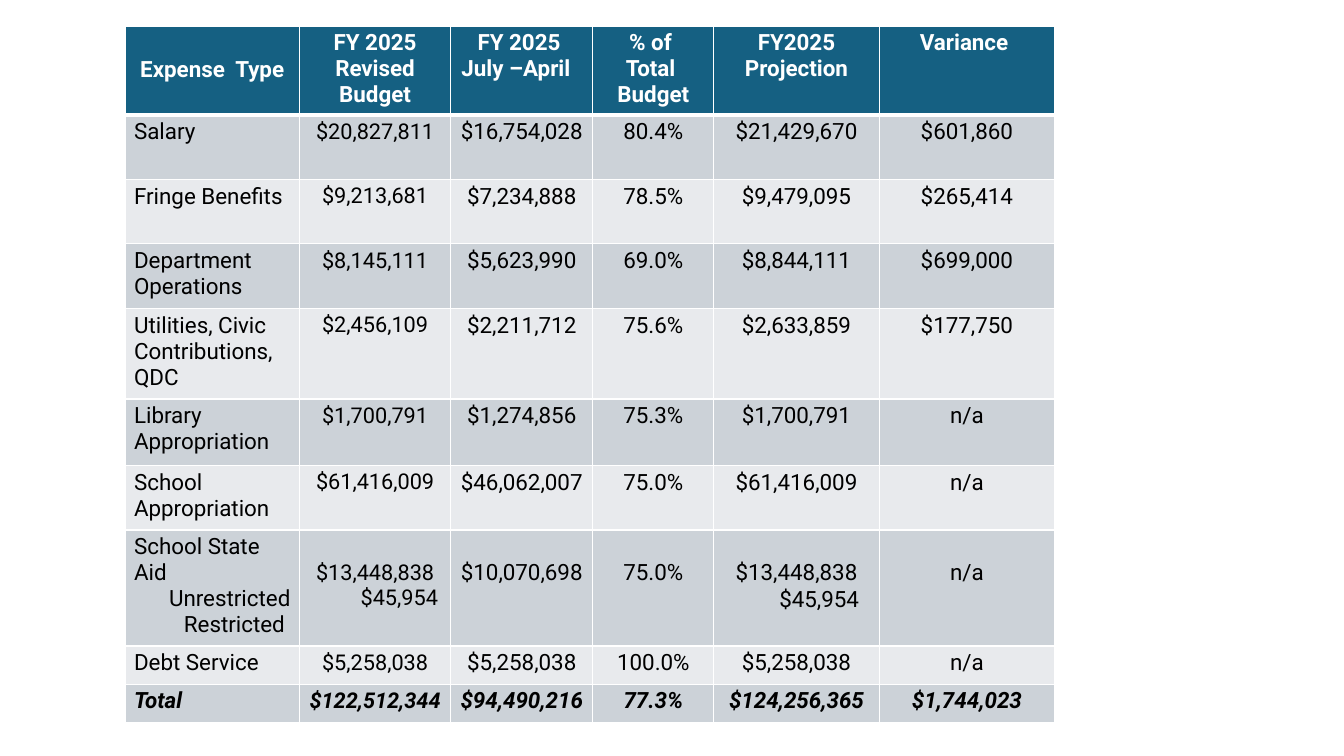
from dataclasses import dataclass

from lxml.etree import SubElement
from pptx import Presentation
from pptx.dml.color import RGBColor
from pptx.enum.text import PP_ALIGN as Align
from pptx.oxml.ns import qn
from pptx.table import _Cell as Cell
from pptx.util import Inches, Pt

FONT = "Roboto"
WHITE, BLACK, HEADER_BLUE = "FFFFFF", "000000", "156082"
BAND_FILLS = ("E8EAED", "CCD2D8")
LINE_HEIGHT = 0.26
COLUMN_WIDTHS = (1.73, 1.5, 1.41, 1.2, 1.64, 1.74)
BUDGET_COLUMN = 1


@dataclass(frozen=True)
class Line:
    text: str
    align: Align | None = None
    left: float = 0
    right: float = 0


@dataclass(frozen=True)
class Entry:
    lines: tuple[Line, ...]
    lines_down: int = 0


@dataclass(frozen=True)
class Row:
    height: float
    entries: tuple[str | Entry, ...]


def lowered(*lines: Line) -> Entry:
    return Entry(lines, lines_down=1)


# Table content
ROWS = (
    Row(0.88, (
        lowered(Line("Expense  Type")),
        "FY 2025 Revised Budget",
        Entry((Line("FY 2025 "), Line("July –April ", right=0.06))),
        Entry((Line("% of "), Line("Total "), Line("Budget"))),
        "FY2025 Projection",
        "Variance ",
    )),
    Row(0.64, ("Salary", "$20,827,811", "$16,754,028", "80.4%", "$21,429,670", "$601,860")),
    Row(0.64, ("Fringe Benefits", "$9,213,681", "$7,234,888", "78.5%", "$9,479,095", "$265,414")),
    Row(0.64, ("Department Operations", "$8,145,111", "$5,623,990", "69.0%", "$8,844,111",
               "$699,000")),
    Row(0.9, ("Utilities, Civic Contributions, QDC", "$2,456,109", "$2,211,712", "75.6%",
              "$2,633,859", "$177,750")),
    Row(0.66, ("Library Appropriation", "$1,700,791", "$1,274,856", "75.3%", "$1,700,791", "n/a")),
    Row(0.64, ("School Appropriation", "$61,416,009", "$46,062,007", "75.0%", "$61,416,009",
               "n/a")),
    Row(1.15, (
        Entry((Line("School State Aid"), Line("Unrestricted", Align.RIGHT),
               Line("Restricted ", Align.RIGHT))),
        lowered(Line("$13,448,838"), Line("$45,954", left=0.48)),
        lowered(Line("$10,070,698")),
        lowered(Line("75.0%")),
        lowered(Line("$13,448,838"), Line("$45,954", left=0.45)),
        lowered(Line("n/a")),
    )),
    Row(0.38, ("Debt Service", "$5,258,038", "$5,258,038", "100.0%", "$5,258,038", "n/a")),
    Row(0.38, ("Total", "$122,512,344", "$94,490,216", "77.3%", "$124,256,365", "$1,744,023")),
)


def color(value: str) -> RGBColor:
    return RGBColor.from_string(value)


def set_borders(cell: Cell, top: float, bottom: float) -> None:
    """Draw white borders; the fill must already be set."""
    properties = cell._tc.get_or_add_tcPr()
    widths = {"a:lnL": 1, "a:lnR": 1, "a:lnT": top, "a:lnB": bottom}
    for position, (tag, width) in enumerate(widths.items()):
        border = SubElement(properties, qn(tag), w=str(Pt(width)))
        SubElement(SubElement(border, qn("a:solidFill")), qn("a:srgbClr"), val=WHITE)
        properties.insert(position, border)


def write_entry(cell: Cell, entry: Entry, row: int, column: int) -> None:
    is_header, is_total = row == 0, row == len(ROWS) - 1
    cell.margin_left = cell.margin_right = Inches(0.09)
    cell.margin_top = Inches(0.04 + entry.lines_down * LINE_HEIGHT)
    cell.margin_bottom = Inches(0.04)
    default_align = Align.CENTER if is_header or column else Align.LEFT
    for index, line in enumerate(entry.lines):
        frame = cell.text_frame
        paragraph = frame.add_paragraph() if index else frame.paragraphs[0]
        paragraph.alignment = line.align or default_align
        if line.left or line.right:
            properties = paragraph._p.get_or_add_pPr()
            properties.set("marL", str(Inches(line.left)))
            properties.set("marR", str(Inches(line.right)))
            properties.set("indent", "0")
        run = paragraph.add_run()
        run.text = line.text
        font = run.font
        font.name = FONT
        font.size = Pt(15.5 if column == BUDGET_COLUMN and not is_header else 16)
        font.bold = is_header or is_total
        font.italic = is_total
        font.color.rgb = color(WHITE if is_header else BLACK)


def add_budget_table(slide) -> None:
    height = sum(row.height for row in ROWS)
    table = slide.shapes.add_table(
        len(ROWS), len(COLUMN_WIDTHS), Inches(1.24), Inches(0.26),
        Inches(sum(COLUMN_WIDTHS)), Inches(height)).table
    for column, width in zip(table.columns, COLUMN_WIDTHS):
        column.width = Inches(width)
    for row_index, row in enumerate(ROWS):
        table.rows[row_index].height = Inches(row.height)
        for column_index, content in enumerate(row.entries):
            cell = table.cell(row_index, column_index)
            entry = content if isinstance(content, Entry) else Entry((Line(content),))
            write_entry(cell, entry, row_index, column_index)
            cell.fill.solid()
            cell.fill.fore_color.rgb = color(
                BAND_FILLS[row_index % 2] if row_index else HEADER_BLUE)
            # Heavy rule between the header and the first expense row
            set_borders(cell, top=3 if row_index == 1 else 1, bottom=1 if row_index else 3)


def main() -> None:
    presentation = Presentation()
    presentation.slide_width = Inches(13.33)
    presentation.slide_height = Inches(7.5)
    slide = presentation.slides.add_slide(presentation.slide_layouts[6])
    add_budget_table(slide)
    presentation.save("out.pptx")


if __name__ == "__main__":
    main()
